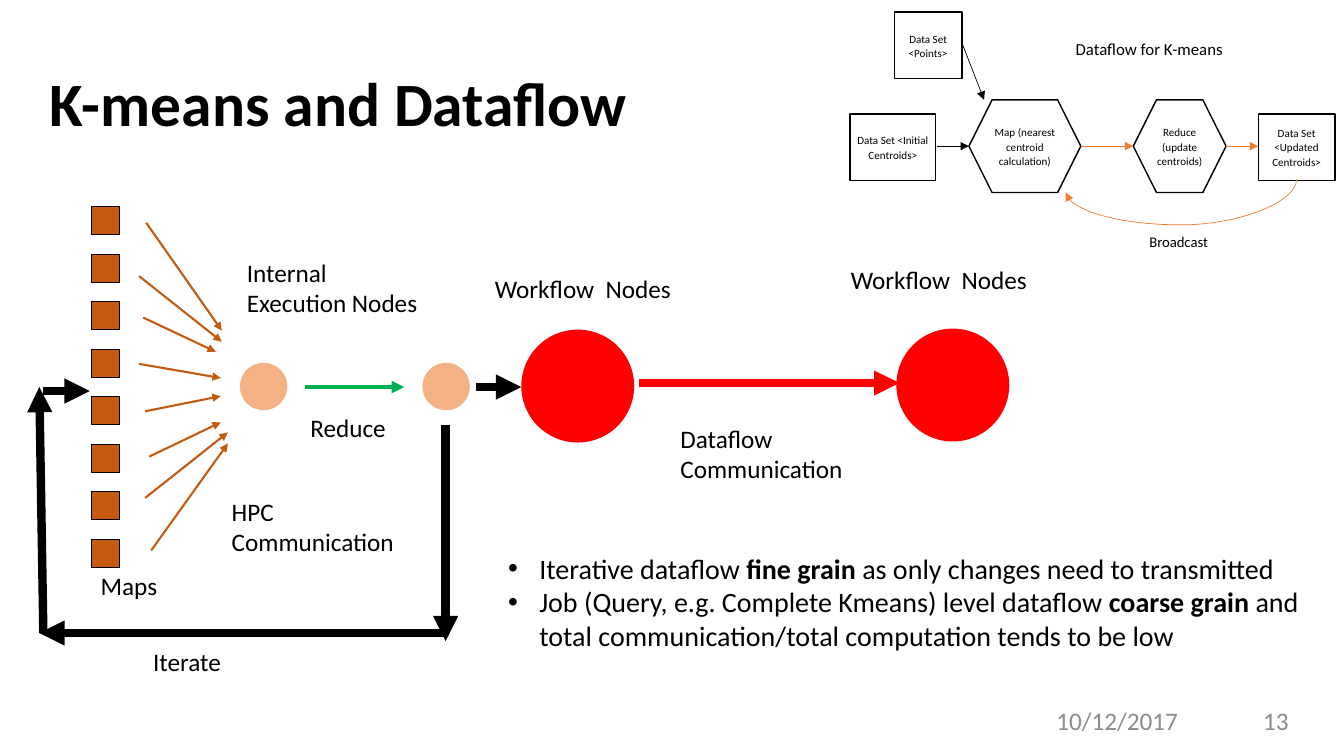
from lxml.etree import SubElement
from pptx import Presentation
from pptx.dml.color import RGBColor
from pptx.enum.shapes import MSO_CONNECTOR, MSO_SHAPE
from pptx.enum.text import MSO_ANCHOR, PP_ALIGN
from pptx.oxml.ns import qn
from pptx.util import Inches, Pt

# Slide grid: 1333 columns by 750 rows
CELL = Inches(0.01)
COLS, ROWS = 1333, 750
FONT = "Calibri"
BLACK, WHITE, GREY = "000000", "FFFFFF", "8C8C8C"
RUST, PEACH, ORANGE = "C55A11", "F4B183", "ED7D31"
RED, GREEN = "FF0000", "00B050"


def color(code):
    return RGBColor.from_string(code)


def place(box, *spot):
    """Turn grid offsets within a box into slide lengths."""
    return [round((n + box[i % 2] * (i < 2)) * CELL) for i, n in enumerate(spot)]


def style(frame, size, ink=BLACK, align=PP_ALIGN.LEFT, space=None):
    for para in frame.paragraphs:
        para.alignment = align
        if space:
            para.line_spacing = space
        for run in para.runs:
            run.font.size = Pt(size)
            run.font.name = FONT
            run.font.color.rgb = color(ink)


def bare(frame):
    frame.margin_left = frame.margin_right = 0
    frame.margin_top = frame.margin_bottom = 0
    frame.vertical_anchor = MSO_ANCHOR.MIDDLE


def label(slide, box, spot, text, size=18, ink=BLACK, align=PP_ALIGN.LEFT):
    frame = slide.shapes.add_textbox(*place(box, *spot)).text_frame
    frame.word_wrap = True
    frame.text = text
    style(frame, size, ink, align)
    return frame


def solid(slide, box, kind, spot, fill, line=None, width=1):
    shape = slide.shapes.add_shape(kind, *place(box, *spot))
    shape.shadow.inherit = False
    shape.fill.solid()
    shape.fill.fore_color.rgb = color(fill)
    if line:
        shape.line.color.rgb = color(line)
        shape.line.width = Pt(width)
    else:
        shape.line.fill.background()
    return shape


def arrow(slide, box, ends, ink, width, kind=MSO_CONNECTOR.STRAIGHT):
    start, stop = place(box, *ends[:2]), place(box, *ends[2:])
    link = slide.shapes.add_connector(kind, *start, *stop)
    link.line.color.rgb = color(ink)
    link.line.width = Pt(width)
    SubElement(link.line._get_or_add_ln(), qn("a:tailEnd"), type="triangle")
    SubElement(link._element.spPr, qn("a:effectLst"))
    return link


def heading(slide, box):
    title = slide.shapes.title
    title.left, title.top, title.width, title.height = place(box, 0, 0, 653, 145)
    frame = title.text_frame
    frame.text = "K-means and Dataflow"
    frame.vertical_anchor = MSO_ANCHOR.MIDDLE
    style(frame, 44, space=0.9)
    frame.paragraphs[0].runs[0].font.bold = True


def flow(slide, box):
    # Data sets and operations
    hexa, rect = MSO_SHAPE.HEXAGON, MSO_SHAPE.RECTANGLE
    for kind, spot, text in (
        (hexa, (118, 87, 111, 92), "Map (nearest centroid calculation)"),
        (hexa, (281, 87, 92, 92), "Reduce (update centroids)"),
        (rect, (44, 0, 67, 66), "Data Set <Points>"),
        (rect, (0, 101, 85, 66), "Data Set <Initial Centroids>"),
        (rect, (405, 101, 76, 66), "Data Set <Updated Centroids>"),
    ):
        frame = solid(slide, box, kind, spot, WHITE, BLACK).text_frame
        frame.word_wrap = True
        frame.text = text
        bare(frame)
        style(frame, 7.9, align=PP_ALIGN.CENTER, space=1.07)

    # Links between them
    for ends, ink in (
        ((112, 33, 133, 87), BLACK),
        ((86, 133, 118, 133), BLACK),
        ((229, 133, 281, 133), ORANGE),
        ((373, 133, 405, 133), ORANGE),
    ):
        arrow(slide, box, ends, ink, 0.5)

    # Broadcast loop: a curve turned by a quarter
    curve = arrow(slide, box, (322, 58, 335, 287), ORANGE, 0.5, MSO_CONNECTOR.CURVE)
    props = curve._element.spPr
    props.find(qn("a:xfrm")).set("rot", "5400000")
    guides = props.find(qn("a:prstGeom")).get_or_add_avLst()
    SubElement(guides, qn("a:gd"), name="adj1", fmla="val 347500")

    bare(label(slide, box, (297, 211, 70, 34), "Broadcast", 10.5))
    label(slide, box, (214, 22, 185, 60), "Dataflow for K-means", 12)


def loop(slide, box):
    # Column of maps
    side, count, gap = 28, 8, 330 / 7
    for i in range(count):
        spot = (52, i * gap, side, side)
        solid(slide, box, MSO_SHAPE.RECTANGLE, spot, RUST, BLACK, 0.75)

    # Fan from the maps into the first node
    for ends in (
        (106, 16, 181, 123), (99, 69, 181, 134),
        (103, 110, 175, 144), (99, 156, 180, 170),
        (105, 203, 180, 188), (109, 248, 180, 214),
        (105, 289, 187, 224), (111, 341, 187, 235),
    ):
        arrow(slide, box, ends, RUST, 1.5)

    # Internal nodes and the reduce step
    for left in (199, 380):
        solid(slide, box, MSO_SHAPE.OVAL, (left, 155, 47, 47), PEACH)
    arrow(slide, box, (264, 179, 362, 179), GREEN, 3)

    # Way back to the maps
    for ends in (
        (403, 217, 403, 431), (403, 423, 0, 423),
        (4, 423, 0, 179), (4, 183, 50, 183),
    ):
        arrow(slide, box, ends, BLACK, 6)

    for spot, text in (
        ((259, 199, 109, 46), "Reduce"),
        ((51, 356, 87, 46), "Maps"),
        ((103, 431, 100, 46), "Iterate"),
        ((196, 45, 217, 80), "Internal\nExecution Nodes"),
        ((181, 282, 207, 80), "HPC\nCommunication"),
    ):
        label(slide, box, spot, text)


def jobs(slide, box):
    for left, top, text_left, text_top in ((45, 70, 9, 9), (417, 69, 362, 0)):
        solid(slide, box, MSO_SHAPE.OVAL, (left, top, 112, 112), RED)
        label(slide, box, (text_left, text_top, 223, 46), "Workflow  Nodes")
    arrow(slide, box, (0, 127, 45, 127), BLACK, 6)
    arrow(slide, box, (162, 123, 420, 123), RED, 6)
    label(slide, box, (193, 158, 207, 80), "Dataflow \nCommunication")


def notes(slide, box):
    points = (
        ("Iterative dataflow ", "fine grain ", "as only changes need to transmitted"),
        ("Job (Query, e.g. Complete Kmeans) level dataflow ", "coarse grain ",
         "and total communication/total computation tends to be low"),
    )
    frame = label(slide, box, (0, 0, 831, 111), "")
    for i, parts in enumerate(points):
        para = frame.add_paragraph() if i else frame.paragraphs[0]
        props = para._p.get_or_add_pPr()
        props.set("marL", str(31 * CELL))
        props.set("indent", str(-31 * CELL))
        SubElement(props, qn("a:buFont"), typeface="Arial")
        SubElement(props, qn("a:buChar"), char="•")
        for j, part in enumerate(parts):
            run = para.add_run()
            run.text = part
            run.font.bold = j == 1
    style(frame, 20)


def footer(slide, box):
    label(slide, box, (0, 0, 146, 40), "10/12/2017", ink=GREY)
    label(slide, box, (131, 0, 119, 40), "13", ink=GREY, align=PP_ALIGN.RIGHT)


def main():
    deck = Presentation()
    deck.slide_width, deck.slide_height = COLS * CELL, ROWS * CELL
    slide = deck.slides.add_slide(deck.slide_layouts[5])
    heading(slide, (39, 33))
    footer(slide, (1038, 695))
    flow(slide, (843, 12))
    loop(slide, (39, 205))
    jobs(slide, (472, 257))
    notes(slide, (494, 542))
    deck.save("out.pptx")


if __name__ == "__main__":
    main()
